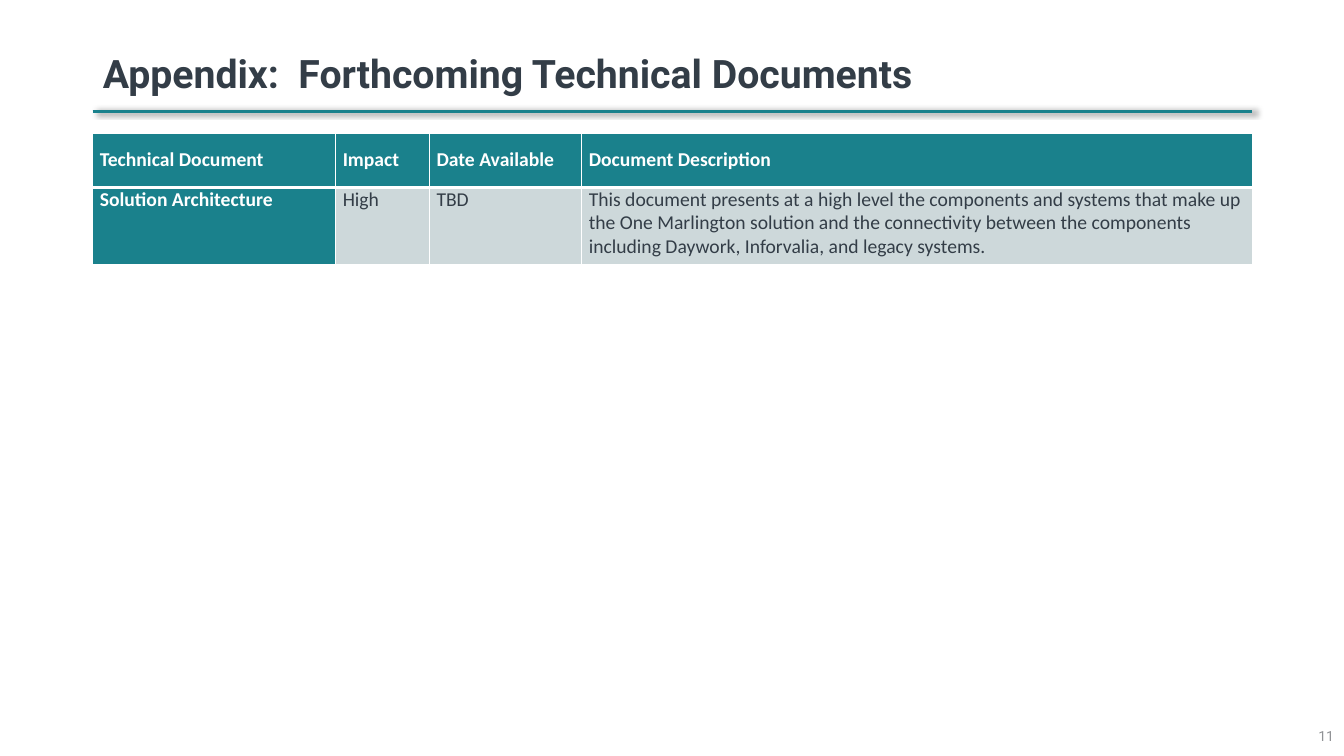
"""Build the appendix slide listing forthcoming technical documents."""
from dataclasses import dataclass

from lxml.etree import SubElement
from pptx import Presentation
from pptx.dml.color import RGBColor
from pptx.enum.shapes import MSO_CONNECTOR as Connector
from pptx.enum.text import MSO_ANCHOR as Anchor, PP_ALIGN as Align
from pptx.oxml.ns import qn
from pptx.slide import Slide
from pptx.table import _Cell as Cell
from pptx.text.text import _Paragraph as Paragraph
from pptx.util import Inches, Pt

TEAL = RGBColor(0x1A, 0x81, 0x8C)
PALE = RGBColor(0xCD, 0xD8, 0xDA)
SLATE = RGBColor(0x33, 0x3D, 0x47)
GREY = RGBColor(0x90, 0x92, 0x95)
WHITE = RGBColor(0xFF, 0xFF, 0xFF)
BLACK = RGBColor(0, 0, 0)

LEFT, WIDTH = 0.92, 11.5
RULE_TOP = 1.11
HEADER_HEIGHT, ROW_HEIGHT = 0.54, 0.77
COLUMN_WIDTHS = (2.41, 0.93, 1.51, 6.65)
HEADINGS = ("Technical Document", "Impact", "Date Available", "Document Description")


@dataclass(frozen=True)
class Document:
    name: str
    impact: str
    available: str
    description: str


@dataclass(frozen=True)
class CellStyle:
    fill: RGBColor
    color: RGBColor
    bold: bool
    anchor: Anchor
    space_before: float
    top: float
    bottom: float


HEADING = CellStyle(TEAL, WHITE, True, Anchor.MIDDLE, 0, 1, 3)
NAME = CellStyle(TEAL, WHITE, True, Anchor.TOP, 6, 3, 1)
DETAIL = CellStyle(PALE, SLATE, False, Anchor.TOP, 6, 3, 1)

DOCUMENTS = (
    Document(
        "Solution Architecture",
        "High",
        "TBD",
        "This document presents at a high level the components and systems that make up "
        "the One Marlington solution and the connectivity between the components "
        "including Daywork, Inforvalia, and legacy systems.",
    ),
)


def set_font(para: Paragraph, name: str, size: float, color: RGBColor, bold: bool = False) -> None:
    font = para.font
    font.name, font.size, font.bold = name, Pt(size), bold
    font.color.rgb = color


def add_title(page: Slide, text: str) -> None:
    title = page.shapes.title
    title.left, title.top = Inches(LEFT), Inches(0.4)
    title.width, title.height = Inches(WIDTH), Inches(0.71)
    frame = title.text_frame
    frame.text = text
    frame.word_wrap = True
    frame.vertical_anchor = Anchor.MIDDLE
    para = frame.paragraphs[0]
    para.alignment = Align.LEFT
    para.line_spacing = 0.9
    set_font(para, "Roboto", 28, SLATE, True)


def add_rule(page: Slide) -> None:
    rule = page.shapes.add_connector(
        Connector.STRAIGHT, Inches(LEFT), Inches(RULE_TOP), Inches(LEFT + WIDTH), Inches(RULE_TOP)
    )
    rule.line.color.rgb = TEAL
    rule.line.width = Pt(2.25)
    effects = SubElement(rule._element.spPr, qn("a:effectLst"))
    shadow = SubElement(
        effects, qn("a:outerShdw"), blurRad=str(Pt(4)), dist=str(Pt(3)), dir="0", rotWithShape="0"
    )
    color = SubElement(shadow, qn("a:srgbClr"), val=str(BLACK))
    SubElement(color, qn("a:alpha"), val="40000")


def add_page_number(page: Slide, number: str) -> None:
    box = page.shapes.add_textbox(Inches(10.33), Inches(7.1), Inches(3), Inches(0.4))
    frame = box.text_frame
    frame.word_wrap = True
    frame.vertical_anchor = Anchor.MIDDLE
    frame.text = number
    para = frame.paragraphs[0]
    para.alignment = Align.RIGHT
    set_font(para, "Roboto", 10, GREY)


def fill_cell(cell: Cell, text: str, style: CellStyle) -> None:
    cell.text = text
    cell.vertical_anchor = style.anchor
    cell.margin_left = cell.margin_right = Inches(0.07)
    cell.margin_top = cell.margin_bottom = 0
    para = cell.text_frame.paragraphs[0]
    para.space_before = Pt(style.space_before)
    set_font(para, "Calibri", 14, style.color, style.bold)
    properties = cell._tc.get_or_add_tcPr()
    for side, width in (("L", 1), ("R", 1), ("T", style.top), ("B", style.bottom)):
        border = SubElement(properties, qn(f"a:ln{side}"), w=str(Pt(width)))
        SubElement(SubElement(border, qn("a:solidFill")), qn("a:srgbClr"), val=str(WHITE))
    cell.fill.solid()
    cell.fill.fore_color.rgb = style.fill


def add_document_table(page: Slide) -> None:
    height = HEADER_HEIGHT + ROW_HEIGHT * len(DOCUMENTS)
    table = page.shapes.add_table(
        len(DOCUMENTS) + 1, len(HEADINGS), Inches(LEFT), Inches(1.32), Inches(WIDTH), Inches(height)
    ).table
    for column, width in zip(table.columns, COLUMN_WIDTHS):
        column.width = Inches(width)
    for index, row in enumerate(table.rows):
        row.height = Inches(ROW_HEIGHT if index else HEADER_HEIGHT)
    for cell, heading in zip(table.rows[0].cells, HEADINGS):
        fill_cell(cell, heading, HEADING)
    for index, document in enumerate(DOCUMENTS, start=1):
        texts = (document.name, document.impact, document.available, document.description)
        styles = (NAME, DETAIL, DETAIL, DETAIL)
        for cell, text, style in zip(table.rows[index].cells, texts, styles):
            fill_cell(cell, text, style)


def main() -> None:
    deck = Presentation()
    deck.slide_width, deck.slide_height = Inches(13.33), Inches(7.5)
    page = deck.slides.add_slide(deck.slide_layouts.get_by_name("Title Only"))
    add_rule(page)
    add_title(page, "Appendix:  Forthcoming Technical Documents")
    add_page_number(page, "11")
    add_document_table(page)
    deck.save("out.pptx")


if __name__ == "__main__":
    main()
